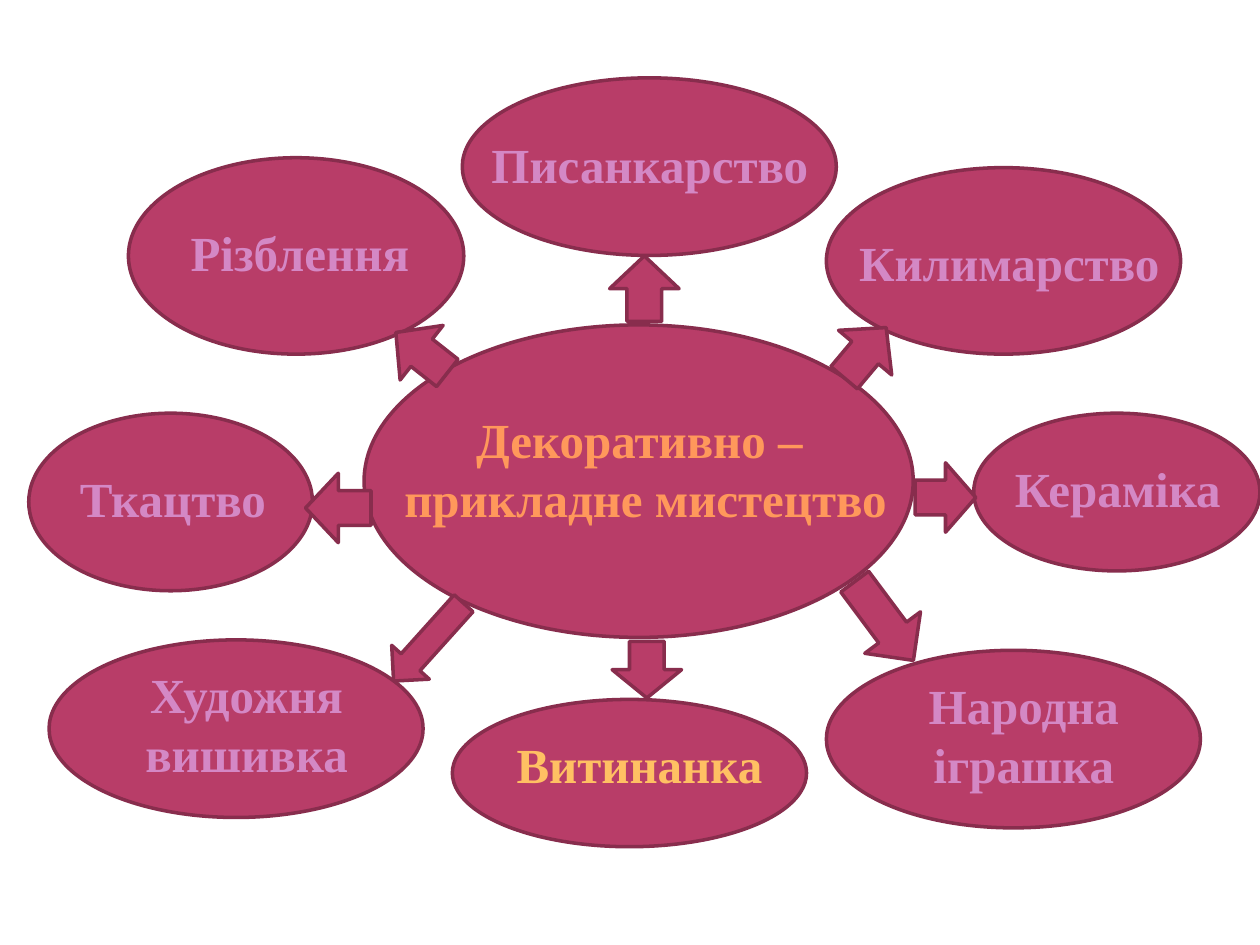
"""Build a mind map of the branches of decorative and applied art."""
from dataclasses import dataclass

from pptx import Presentation
from pptx.dml.color import RGBColor
from pptx.enum import shapes, text
from pptx.util import Cm, Pt

COLORS = {
    "fill": "B83D68",
    "line": "882D4D",
    "topic": "FF985B",
    "branch": "D488C5",
    "accent": "FFC063",
}
FONT = "Times New Roman"


@dataclass
class Box:
    left: float
    top: float
    width: float
    height: float

    def emu(self) -> list[int]:
        return [Cm(v) for v in (self.left, self.top, self.width, self.height)]


@dataclass
class Label:
    lines: list[str]
    left: float
    top: float
    width: float
    color: str = "branch"


@dataclass
class Node:
    oval: Box
    label: Label


@dataclass
class Arrow:
    box: Box
    angle: float


NODES = [
    Node(Box(7.34, 6.55, 11.07, 6.3),
         Label(["Декоративно –", " прикладне мистецтво"], 3.76, 8.13, 18.26, "topic")),
    Node(Box(9.32, 1.57, 7.54, 3.58), Label(["Писанкарство"], 9.53, 2.59, 7.14)),
    Node(Box(16.66, 3.38, 7.14, 3.76), Label(["Килимарство"], 16.28, 4.57, 8.13)),
    Node(Box(19.63, 8.33, 5.77, 3.18), Label(["Кераміка"], 18.47, 9.12, 8.13)),
    Node(Box(16.66, 13.11, 7.54, 3.58), Label(["Народна", "іграшка"], 17.07, 13.49, 7.14)),
    Node(Box(9.12, 14.1, 7.14, 2.97), Label(["Витинанка"], 9.32, 14.68, 7.14, "accent")),
    Node(Box(0.99, 12.9, 7.54, 3.58), Label(["Художня", "вишивка"], 1.4, 13.28, 7.14)),
    Node(Box(0.58, 8.33, 5.72, 3.58), Label(["Ткацтво"], -0.58, 9.32, 8.13)),
    Node(Box(2.59, 3.18, 6.76, 3.96), Label(["Різблення"], 1.98, 4.37, 8.13)),
]

ARROWS = [
    Arrow(Box(12.29, 5.16, 1.4, 1.32), 0),
    Arrow(Box(16.74, 6.45, 1.4, 1.32), 40),
    Arrow(Box(18.36, 9.42, 1.4, 1.22), 90),
    Arrow(Box(17.12, 11.53, 1.4, 1.98), 143.3),
    Arrow(Box(12.34, 12.93, 1.4, 1.14), 180),
    Arrow(Box(8.13, 11.89, 1.02, 2.11), 222),
    Arrow(Box(6.12, 9.58, 1.4, 1.32), 270),
    Arrow(Box(7.8, 6.45, 1.4, 1.32), 308.2),
]


def rgb(name: str) -> RGBColor:
    return RGBColor.from_string(COLORS[name])


def draw_shape(s, kind: shapes.MSO_SHAPE, box: Box, angle: float = 0) -> None:
    sp = s.shapes.add_shape(kind, *box.emu())
    sp.rotation = angle
    sp.shadow.inherit = False
    sp.fill.solid()
    sp.fill.fore_color.rgb = rgb("fill")
    sp.line.color.rgb = rgb("line")
    sp.line.width = Pt(2)


def draw_label(s, label: Label) -> None:
    height = 0.26 + 1.19 * len(label.lines)
    sp = s.shapes.add_textbox(*Box(label.left, label.top, label.width, height).emu())
    tf = sp.text_frame
    tf.word_wrap = True
    tf.auto_size = text.MSO_AUTO_SIZE.SHAPE_TO_FIT_TEXT
    for i, line in enumerate(label.lines):
        p = tf.add_paragraph() if i else tf.paragraphs[0]
        p.alignment = text.PP_ALIGN.CENTER
        r = p.add_run()
        r.text = line
        r.font.name = FONT
        r.font.size = Pt(28)
        r.font.bold = True
        r.font.color.rgb = rgb(label.color)


def main() -> None:
    prs = Presentation()
    prs.slide_width, prs.slide_height = Cm(25.4), Cm(19.05)
    s = prs.slides.add_slide(prs.slide_layouts[6])
    for node in NODES:
        draw_shape(s, shapes.MSO_SHAPE.OVAL, node.oval)
        draw_label(s, node.label)
    for arrow in ARROWS:
        draw_shape(s, shapes.MSO_SHAPE.UP_ARROW, arrow.box, arrow.angle)
    prs.save("out.pptx")


if __name__ == "__main__":
    main()
